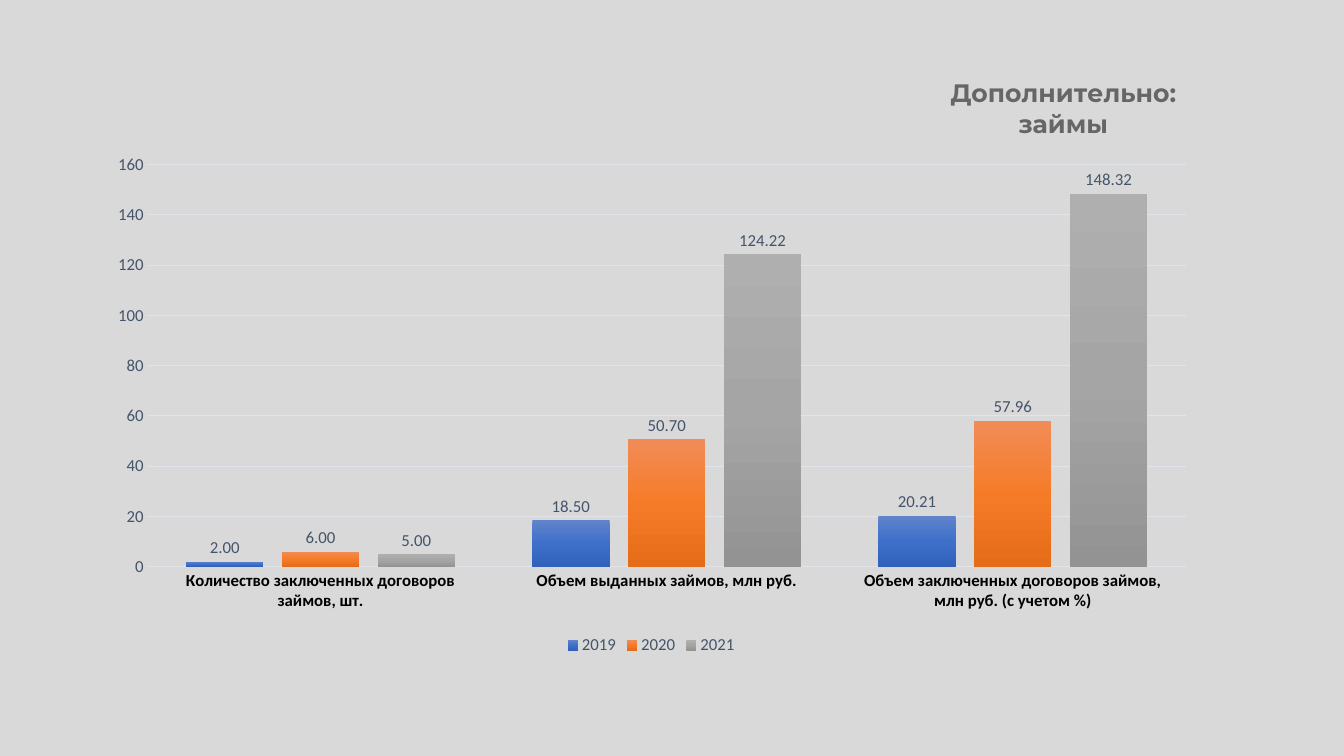
import pptx
import pptx.chart.data
import pptx.dml.color
import pptx.enum.chart
import pptx.enum.text
import pptx.oxml
import pptx.oxml.ns
import pptx.util

RGBColor = pptx.dml.color.RGBColor
BACKGROUND = RGBColor(0xD9, 0xD9, 0xD9)
BLACK = RGBColor(0, 0, 0)
SLATE = RGBColor(0x44, 0x54, 0x6A)
TITLE_GRAY = RGBColor(0x66, 0x66, 0x66)
GRID_LINE = RGBColor(0xE0, 0xE5, 0xEB)
BLUES = RGBColor(0x61, 0x83, 0xCB), RGBColor(0x3E, 0x70, 0xCA), RGBColor(0x30, 0x62, 0xBB)
ORANGES = RGBColor(0xF1, 0x8C, 0x57), RGBColor(0xF6, 0x7B, 0x28), RGBColor(0xE5, 0x6C, 0x19)
GRAYS = RGBColor(0xAF, 0xAF, 0xAF), RGBColor(0xA5, 0xA5, 0xA5), RGBColor(0x93, 0x93, 0x93)

TITLE_LINES = ["Дополнительно:", "займы"]
CATEGORIES = [
    "Количество заключенных договоров займов, шт.",
    "Объем выданных займов, млн руб.",
    "Объем заключенных договоров займов, млн руб. (с учетом %)",
]
LOANS = [
    ("2019", (2, 18.5, 20.21), BLUES),
    ("2020", (6, 50.7, 57.96), ORANGES),
    ("2021", (5, 124.22, 148.32), GRAYS),
]


class LoanSlide:
    """Holds the deck, its current page and the shared chart style."""

    def __init__(self):
        self.deck = pptx.Presentation()
        self.deck.slide_width = pptx.util.Inches(13.33)
        self.deck.slide_height = pptx.util.Inches(7.5)
        self.page = self.deck.slides.add_slide(self.deck.slide_layouts[6])
        self.page.background.fill.solid()
        self.page.background.fill.fore_color.rgb = BACKGROUND

    def style_font(self, font, color=SLATE, size=12, bold=False, name="Calibri"):
        font.name = name
        font.size = pptx.util.Pt(size)
        font.bold = bold
        font.color.rgb = color

    def style_line(self, line):
        line.color.rgb = GRID_LINE
        line.width = pptx.util.Pt(0.75)

    def place(self, parent, index, **shares):
        tag = pptx.oxml.ns.qn("c:layout")
        for former in parent.findall(tag):
            parent.remove(former)
        values = "".join(f'<c:{key} val="{value}"/>' for key, value in shares.items())
        parent.insert(index, pptx.oxml.parse_xml(
            f'<c:layout {pptx.oxml.ns.nsdecls("c")}><c:manualLayout>{values}</c:manualLayout></c:layout>'))

    def add_chart(self, left, top, width, height):
        data = pptx.chart.data.CategoryChartData(number_format="0.00")
        data.categories = CATEGORIES
        for year, values, colors in LOANS:
            data.add_series(year, values)
        across, down = self.deck.slide_width, self.deck.slide_height
        frame = self.page.shapes.add_chart(
            pptx.enum.chart.XL_CHART_TYPE.COLUMN_CLUSTERED,
            int(left * across), int(top * down), int(width * across), int(height * down), data)
        chart = frame.chart
        self.style_font(chart.font, BLACK, 10)
        plot = chart.plots[0]
        plot.gap_width = 100
        plot.overlap = -24
        plot.vary_by_categories = False
        for series, (year, values, colors) in zip(plot.series, LOANS):
            self.fill_columns(series, colors)
        plot_area = chart._chartSpace.chart.plotArea
        self.place(plot_area, 0, layoutTarget="inner", xMode="edge", yMode="edge",
                   x=0.048, y=0.181, w=0.932, h=0.666)
        return chart

    def fill_columns(self, series, colors):
        stops = "".join(
            f'<a:gs pos="{position * 50000}"><a:srgbClr val="{color}"/></a:gs>'
            for position, color in enumerate(colors))
        series._element.get_or_add_spPr().insert(0, pptx.oxml.parse_xml(
            f'<a:gradFill {pptx.oxml.ns.nsdecls("a")} rotWithShape="1"><a:gsLst>{stops}</a:gsLst>'
            '<a:lin ang="5400000" scaled="0"/></a:gradFill>'))
        labels = series.data_labels
        labels.show_value = True
        labels.position = pptx.enum.chart.XL_LABEL_POSITION.OUTSIDE_END
        labels.number_format = "0.00"
        labels.number_format_is_linked = False
        self.style_font(labels.font)

    def add_title(self, chart, lines):
        text = chart.chart_title.text_frame
        text.text = "\n".join(lines)
        for para in text.paragraphs:
            para.alignment = pptx.enum.text.PP_ALIGN.CENTER
            self.style_font(para.font, TITLE_GRAY, 18, True, "Montserrat")
        self.place(chart.chart_title._element, 1, xMode="edge", yMode="edge", x=0.766, y=0.03)

    def add_axes(self, chart):
        for axis in (chart.category_axis, chart.value_axis):
            axis.major_tick_mark = pptx.enum.chart.XL_TICK_MARK.NONE
            axis.minor_tick_mark = pptx.enum.chart.XL_TICK_MARK.NONE
        self.style_font(chart.category_axis.tick_labels.font, BLACK, bold=True)
        self.style_line(chart.category_axis.format.line)
        values = chart.value_axis
        values.minimum_scale, values.maximum_scale, values.major_unit = 0, 160, 20
        values.tick_labels.number_format = "0"
        values.tick_labels.number_format_is_linked = False
        self.style_font(values.tick_labels.font)
        values.format.line.fill.background()
        self.style_line(values.major_gridlines.format.line)

    def add_legend(self, chart):
        chart.has_legend = True
        chart.legend.position = pptx.enum.chart.XL_LEGEND_POSITION.BOTTOM
        chart.legend.include_in_layout = False
        self.style_font(chart.legend.font)


def main():
    slide = LoanSlide()
    chart = slide.add_chart(0.07, 0.073, 0.829, 0.799)
    slide.add_title(chart, TITLE_LINES)
    slide.add_axes(chart)
    slide.add_legend(chart)
    slide.deck.save("out.pptx")


if __name__ == "__main__":
    main()
